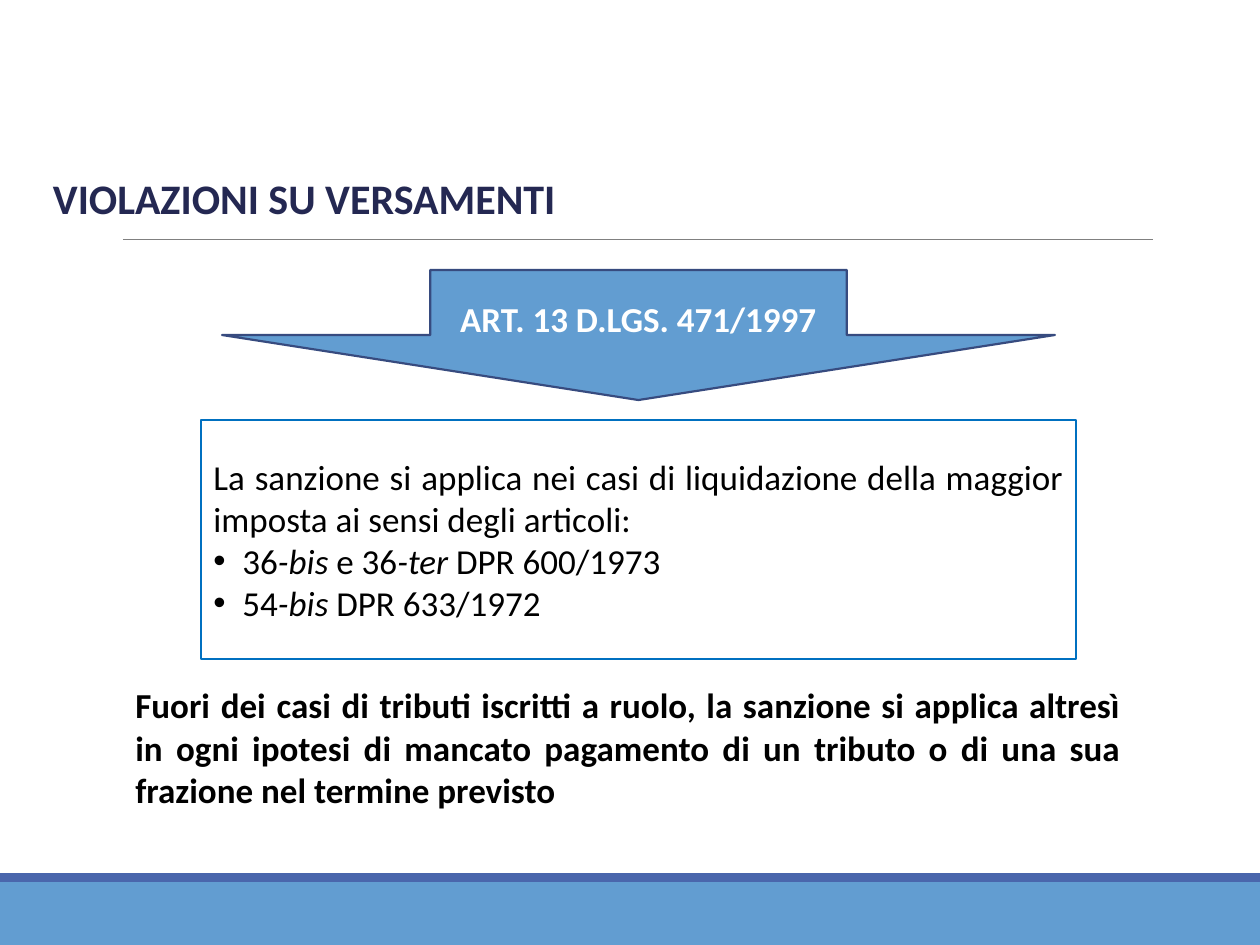
from lxml.etree import SubElement
from pptx import Presentation
from pptx.dml.color import RGBColor
from pptx.enum.shapes import MSO_CONNECTOR as Connector, MSO_SHAPE as Shape
from pptx.enum.text import MSO_ANCHOR as Anchor, PP_ALIGN as Align
from pptx.oxml.ns import qn
from pptx.util import Emu, Pt

WHITE = RGBColor(0xFF, 0xFF, 0xFF)
BLACK = RGBColor(0x00, 0x00, 0x00)
NAVY = RGBColor(0x24, 0x28, 0x52)
SKY = RGBColor(0x62, 0x9D, 0xD1)
INDIGO = RGBColor(0x4A, 0x66, 0xAC)
ARROW_EDGE = RGBColor(0x37, 0x4B, 0x7F)
BOX_EDGE = RGBColor(0x00, 0x70, 0xC0)
GREY = RGBColor(0x80, 0x80, 0x80)

FONT = "Calibri"
WIDTH, HEIGHT = 1260, 945
BULLET_INDENT = 29


def px(length):
    return Emu(round(length * 914400 / 126))


def add_block(slide, kind, box, fill=None, edge=None):
    block = slide.shapes.add_shape(kind, *map(px, box))
    block.shadow.inherit = False
    if fill is None:
        block.fill.background()
    else:
        block.fill.solid()
        block.fill.fore_color.rgb = fill
    if edge is None:
        block.line.fill.background()
    else:
        block.line.color.rgb = edge
        block.line.width = Pt(1.25)
    return block


def add_rule(slide, left, right, y):
    rule = slide.shapes.add_connector(
        Connector.STRAIGHT, px(left), px(y), px(right), px(y))
    rule.line.color.rgb = GREY
    rule.line.width = Pt(0.5)
    SubElement(rule._element.spPr, qn("a:effectLst"))


def add_bullet(paragraph):
    properties = paragraph._p.get_or_add_pPr()
    properties.set("marL", str(px(BULLET_INDENT)))
    properties.set("indent", str(px(-BULLET_INDENT)))
    SubElement(properties, qn("a:buFont"), typeface="Arial")
    SubElement(properties, qn("a:buChar"), char="•")


def write(holder, paragraphs, align, color, size=20, bold=False):
    """Each paragraph is (has_bullet, runs); every second run is italic."""
    frame = holder.text_frame
    frame.word_wrap = True
    frame.vertical_anchor = Anchor.MIDDLE
    for index, (has_bullet, runs) in enumerate(paragraphs):
        paragraph = frame.add_paragraph() if index else frame.paragraphs[0]
        paragraph.alignment = align
        if has_bullet:
            add_bullet(paragraph)
        for position, words in enumerate(runs):
            run = paragraph.add_run()
            run.text = words
            look = {"name": FONT, "size": Pt(size), "bold": bold,
                    "italic": position % 2 == 1}
            for attribute, value in look.items():
                setattr(run.font, attribute, value)
            run.font.color.rgb = color


def add_text(slide, box, words, align, color, **look):
    label = slide.shapes.add_textbox(*map(px, box))
    write(label, [(False, [words])], align, color, **look)
    return label


def main():
    deck = Presentation()
    deck.slide_width, deck.slide_height = px(WIDTH), px(HEIGHT)
    slide = deck.slides.add_slide(deck.slide_layouts[6])

    # Footer bands and title rule
    add_block(slide, Shape.RECTANGLE, (0, 882, WIDTH, 63), SKY)
    add_block(slide, Shape.RECTANGLE, (0, 873, WIDTH, 9), INDIGO)
    add_rule(slide, 123, 1153, 239)

    # Arrow naming the law
    law = add_block(slide, Shape.DOWN_ARROW, (222, 270, 833, 130), SKY, ARROW_EDGE)
    write(law, [(False, ["ART. 13 D.LGS. 471/1997"])],
          Align.CENTER, WHITE, bold=True)

    # Box with the cases
    cases = add_block(slide, Shape.RECTANGLE, (201, 420, 875, 239), edge=BOX_EDGE)
    write(cases, [
        (False, ["La sanzione si applica nei casi di liquidazione della maggior "
                 "imposta ai sensi degli articoli:"]),
        (True, ["36", "-bis ", "e 36", "-ter", " DPR 600/1973"]),
        (True, ["54", "-bis", " DPR 633/1972"]),
    ], Align.JUSTIFY, BLACK)

    # Closing rule
    add_text(slide, (123, 705, 1010, 84),
             "Fuori dei casi di tributi iscritti a ruolo, la sanzione si applica "
             "altresì in ogni ipotesi di mancato pagamento di un tributo o di una "
             "sua frazione nel termine previsto",
             Align.JUSTIFY, BLACK, bold=True)

    # Title
    title = add_text(slide, (44, 169, 945, 57), "VIOLAZIONI SU VERSAMENTI",
                     Align.LEFT, NAVY, size=24, bold=True)
    insets = {"margin_left": 9, "margin_right": 9,
              "margin_top": 5, "margin_bottom": 5}
    for side, inset in insets.items():
        setattr(title.text_frame, side, px(inset))

    deck.save("out.pptx")


if __name__ == "__main__":
    main()
